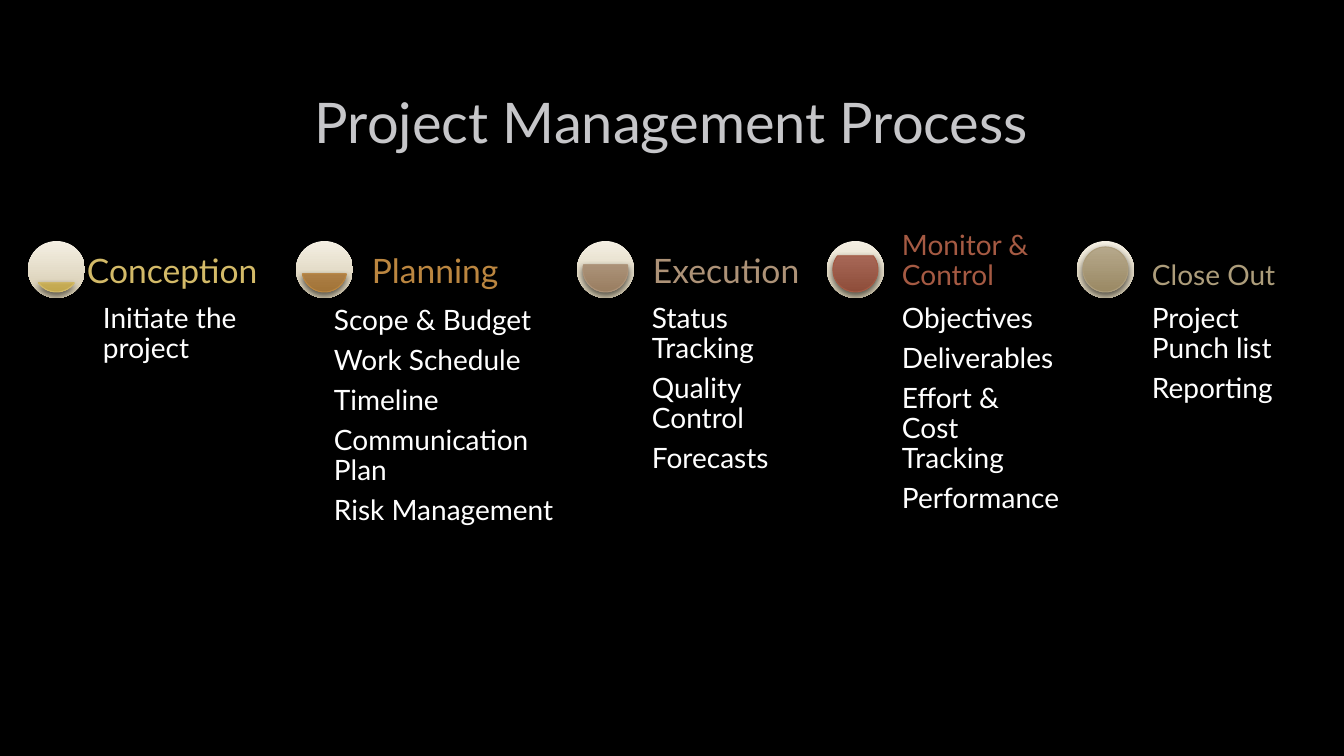
from dataclasses import dataclass
from math import asin, degrees

from lxml import etree
from pptx import Presentation
from pptx.dml.color import RGBColor
from pptx.enum.shapes import MSO_SHAPE
from pptx.enum.text import MSO_ANCHOR, PP_ALIGN
from pptx.oxml.ns import qn
from pptx.shapes.autoshape import Shape
from pptx.shapes.shapetree import GroupShapes
from pptx.util import Emu, Pt

CHORD = MSO_SHAPE.CHORD
OVAL = MSO_SHAPE.OVAL
TOP = MSO_ANCHOR.TOP
MIDDLE = MSO_ANCHOR.MIDDLE
BOTTOM = MSO_ANCHOR.BOTTOM
CENTER = PP_ALIGN.CENTER

BLACK = RGBColor(0x00, 0x00, 0x00)
WHITE = RGBColor(0xFF, 0xFF, 0xFF)
SILVER = RGBColor(0xC6, 0xC6, 0xC9)
CREAM = RGBColor(0xF4, 0xEF, 0xE3)
SAND = RGBColor(0xD5, 0xCA, 0xAE)
GOLD = RGBColor(0xD3, 0xBA, 0x68)
GOLD_LIGHT = RGBColor(0xD8, 0xC2, 0x7E)
GOLD_DARK = RGBColor(0xC2, 0xA7, 0x4D)
OCHRE = RGBColor(0xBB, 0x86, 0x40)
OCHRE_LIGHT = RGBColor(0xC1, 0x93, 0x5D)
OCHRE_DARK = RGBColor(0xA1, 0x73, 0x37)
TAUPE = RGBColor(0xAD, 0x92, 0x77)
TAUPE_LIGHT = RGBColor(0xB6, 0x9F, 0x88)
TAUPE_DARK = RGBColor(0x9A, 0x7E, 0x61)
RUST = RGBColor(0xA5, 0x5A, 0x43)
RUST_LIGHT = RGBColor(0xAD, 0x6E, 0x5E)
RUST_DARK = RGBColor(0x8E, 0x4D, 0x3A)
KHAKI = RGBColor(0xAD, 0x9D, 0x7B)
KHAKI_LIGHT = RGBColor(0xB6, 0xA8, 0x8B)
KHAKI_DARK = RGBColor(0x9A, 0x89, 0x64)

FONT = "Lato"
EMU_PER_PX = 914400 / 100.8
CIRCLE_TOP = 241
CIRCLE_SIZE = 57
LEVEL_INSET = 6
LEVEL_SIZE = 45
LIST_TOP = 298
LIST_HEIGHT = 240
LIST_SIZE = 20


@dataclass(frozen=True)
class Phase:
    name: str
    tasks: tuple[str, ...]
    left: int
    color: RGBColor
    light: RGBColor
    dark: RGBColor
    heading_size: int = 24
    heading_inset: int = 7
    heading_shift: int = 69
    heading_width: int = 170
    list_shift: int = 69
    list_drop: int = 0
    list_width: int = 170


PHASES = (
    Phase("Conception", ("Initiate the project",), 28, GOLD, GOLD_LIGHT, GOLD_DARK,
          heading_shift=52, heading_width=205),
    Phase("Planning",
          ("Scope & Budget", "Work Schedule", "Timeline", "Communication Plan", "Risk Management"),
          296, OCHRE, OCHRE_LIGHT, OCHRE_DARK, list_shift=32, list_drop=2, list_width=232),
    Phase("Execution", ("Status Tracking", "Quality Control", "Forecasts"),
          577, TAUPE, TAUPE_LIGHT, TAUPE_DARK),
    Phase("Monitor & Control",
          ("Objectives", "Deliverables", "Effort & Cost Tracking", "Performance"),
          827, RUST, RUST_LIGHT, RUST_DARK, heading_size=20, heading_inset=6),
    Phase("Close Out", ("Project Punch list", "Reporting"),
          1077, KHAKI, KHAKI_LIGHT, KHAKI_DARK, heading_size=20, heading_inset=6),
)


def px(length: int) -> Emu:
    return Emu(round(length * EMU_PER_PX))


def add_round(shapes: GroupShapes, kind: MSO_SHAPE, left: int, top: int, size: int,
              light: RGBColor, dark: RGBColor) -> Shape:
    shape = shapes.add_shape(kind, px(left), px(top), px(size), px(size))
    shape.shadow.inherit = False
    shape.fill.gradient()
    shape.fill.gradient_angle = 270
    for stop, color in zip(shape.fill.gradient_stops, (light, dark)):
        stop.color.rgb = color
    return shape


def add_drop_shadow(shape: Shape) -> None:
    effects = shape._element.spPr.find(qn("a:effectLst"))
    shadow = etree.SubElement(effects, qn("a:outerShdw"), blurRad=str(Pt(5)), dist=str(Pt(2)),
                              dir="5400000", algn="ctr", rotWithShape="0")
    color = etree.SubElement(shadow, qn("a:srgbClr"), val=str(BLACK))
    etree.SubElement(color, qn("a:alpha"), val="60000")


def add_gauge(shapes: GroupShapes, phase: Phase, level: float) -> None:
    circle = add_round(shapes, OVAL, phase.left, CIRCLE_TOP, CIRCLE_SIZE, CREAM, SAND)
    circle.line.fill.background()
    chord = add_round(shapes, CHORD, phase.left + LEVEL_INSET, CIRCLE_TOP + LEVEL_INSET,
                      LEVEL_SIZE, phase.light, phase.dark)
    chord.line.color.rgb = phase.color
    chord.line.width = Pt(0.75)
    start = degrees(asin(1 - 2 * level))
    for index, angle in enumerate((start, 180 - start)):
        chord.adjustments[index] = angle % 360 * 0.6
    add_drop_shadow(chord)


def add_text(shapes: GroupShapes, lines: tuple[str, ...], left: int, top: int, width: int,
             height: int, inset: int, anchor: MSO_ANCHOR, size: int, color: RGBColor) -> None:
    frame = shapes.add_textbox(px(left), px(top), px(width), px(height)).text_frame
    frame.word_wrap = True
    frame.vertical_anchor = anchor
    frame.margin_left = frame.margin_right = px(inset)
    frame.margin_top = frame.margin_bottom = px(inset)
    frame.text = "\n".join(lines)
    for paragraph in frame.paragraphs:
        paragraph.line_spacing = 0.9
        paragraph.space_after = Pt(size * 0.35)
        paragraph.font.name = FONT
        paragraph.font.size = Pt(size)
        paragraph.font.color.rgb = color


def format_title(title: Shape) -> None:
    title.left, title.top, title.width, title.height = map(px, (101, 68, 1141, 107))
    frame = title.text_frame
    frame.text = "Project Management Process"
    frame.vertical_anchor = MIDDLE
    paragraph = frame.paragraphs[0]
    paragraph.alignment = CENTER
    paragraph.font.name = FONT
    paragraph.font.size = Pt(40)
    paragraph.font.color.rgb = SILVER


def main() -> None:
    presentation = Presentation()
    presentation.slide_width = px(1344)
    presentation.slide_height = px(756)
    slide = presentation.slides.add_slide(presentation.slide_layouts.get_by_name("Title Only"))
    slide.background.fill.solid()
    slide.background.fill.fore_color.rgb = BLACK
    format_title(slide.shapes.title)
    shapes = slide.shapes.add_group_shape().shapes
    for number, phase in enumerate(PHASES, start=1):
        add_gauge(shapes, phase, number / len(PHASES))
        add_text(shapes, phase.tasks, phase.left + phase.list_shift, LIST_TOP + phase.list_drop,
                 phase.list_width, LIST_HEIGHT, 6, TOP, LIST_SIZE, WHITE)
        add_text(shapes, (phase.name,), phase.left + phase.heading_shift, CIRCLE_TOP,
                 phase.heading_width, CIRCLE_SIZE, phase.heading_inset, BOTTOM,
                 phase.heading_size, phase.color)
    presentation.save("out.pptx")


if __name__ == "__main__":
    main()
